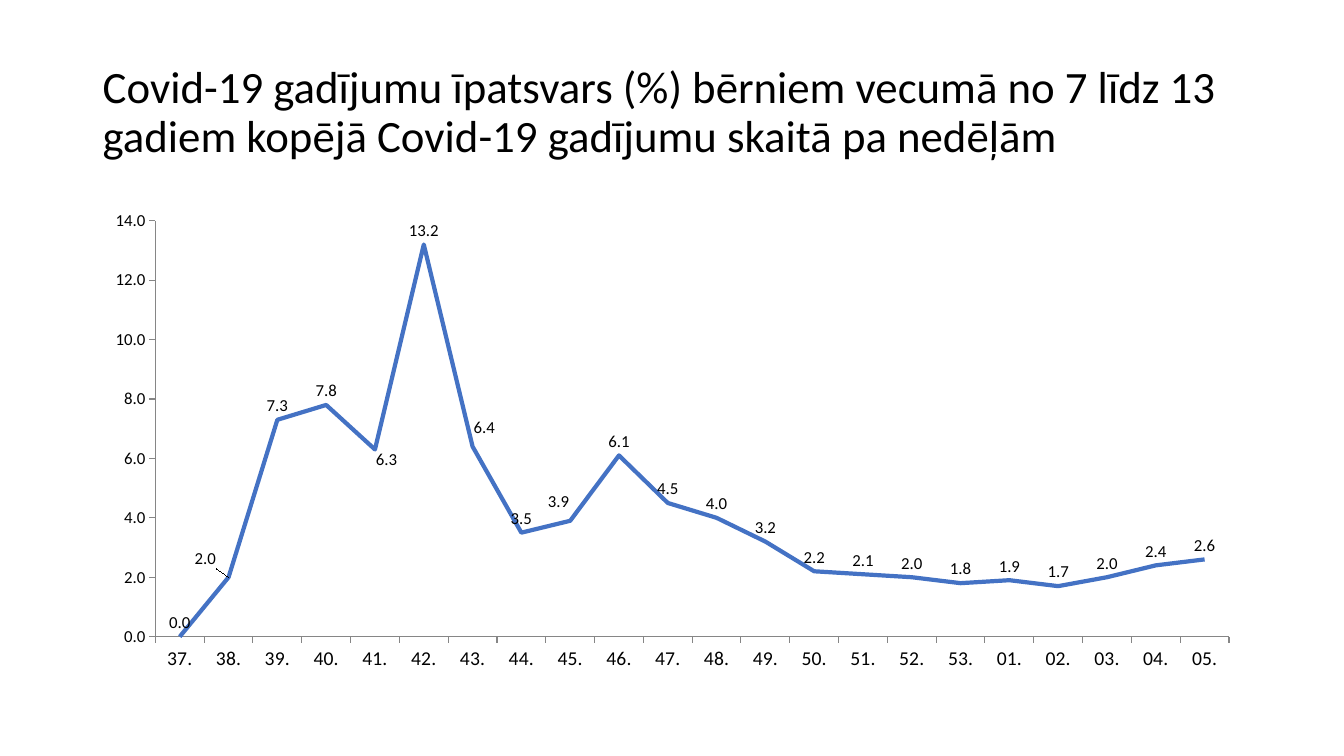
import pptx
import pptx.chart.data
import pptx.dml.color
import pptx.enum.chart
import pptx.enum.text
import pptx.oxml
import pptx.oxml.ns
import pptx.util
from pptx.util import Inches

BLACK = pptx.dml.color.RGBColor(0x00, 0x00, 0x00)
BLUE = pptx.dml.color.RGBColor(0x44, 0x72, 0xC4)
GREY = pptx.dml.color.RGBColor(0x86, 0x86, 0x86)
FONT = "Calibri"
TITLE = (
    "Covid-19 gadījumu īpatsvars (%) bērniem vecumā no 7 līdz 13 gadiem "
    "kopējā Covid-19 gadījumu skaitā pa nedēļām"
)
WEEKS = [f"{week:02}." for week in [*range(37, 54), *range(1, 6)]]
SHARES = [0, 2, 7.3, 7.8, 6.3, 13.2, 6.4, 3.5, 3.9, 6.1, 4.5,
          4, 3.2, 2.2, 2.1, 2, 1.8, 1.9, 1.7, 2, 2.4, 2.6]
LABEL_SHIFTS = {1: (-0.02, -0.01), 4: (0.01, 0.05), 6: (0.01, -0.01), 8: (-0.01, -0.01)}


def style_font(font, size):
    """Set the common typeface and colour at the given size."""
    font.name = FONT
    font.size = pptx.util.Pt(size)
    font.color.rgb = BLACK


def make_layout(**settings):
    """Return a manual chart layout element with the given settings."""
    children = "".join(f'<c:{name} val="{value}"/>' for name, value in settings.items())
    namespace = pptx.oxml.ns.nsdecls("c")
    return pptx.oxml.parse_xml(
        f"<c:layout {namespace}><c:manualLayout>{children}</c:manualLayout></c:layout>"
    )


def add_title(slide):
    """Add the slide title."""
    box = slide.shapes.add_textbox(Inches(0.92), Inches(0.4), Inches(11.5), Inches(1.45))
    frame = box.text_frame
    frame.word_wrap = True
    frame.vertical_anchor = pptx.enum.text.MSO_ANCHOR.MIDDLE
    frame.text = TITLE
    paragraph = frame.paragraphs[0]
    paragraph.line_spacing = 0.9
    style_font(paragraph.runs[0].font, 32)


def style_axis(axis, size):
    """Give an axis its line, outward ticks and label font."""
    axis.has_major_gridlines = False
    axis.major_tick_mark = pptx.enum.chart.XL_TICK_MARK.OUTSIDE
    axis.minor_tick_mark = pptx.enum.chart.XL_TICK_MARK.NONE
    axis.format.line.color.rgb = GREY
    axis.format.line.width = pptx.util.Pt(0.75)
    style_font(axis.tick_labels.font, size)


def style_labels(series):
    """Show values above the line and shift the crowded ones."""
    above = pptx.enum.chart.XL_LABEL_POSITION.ABOVE
    labels = series.data_labels
    labels.show_value = True
    labels.number_format = "0.0"
    labels.number_format_is_linked = False
    labels.position = above
    style_font(labels.font, 12)
    for index in LABEL_SHIFTS:
        label = series.points[index].data_label
        style_font(label.font, 12)
        label.position = above


def place_chart_parts(chart):
    """Fix the plot area and the positions of the shifted labels."""
    plot_area = chart._chartSpace.xpath("c:chart/c:plotArea")[0]
    for layout in plot_area.xpath("c:layout"):
        plot_area.remove(layout)
    plot_area.insert(0, make_layout(
        layoutTarget="inner", xMode="edge", yMode="edge", x=0.054, y=0.04, w=0.926, h=0.867
    ))
    for label in plot_area.xpath(".//c:dLbl"):
        index = label.xpath("c:idx")[0]
        shift_x, shift_y = LABEL_SHIFTS[int(index.get("val"))]
        index.addnext(make_layout(x=shift_x, y=shift_y))


def add_share_chart(slide):
    """Add the line chart of weekly shares."""
    data = pptx.chart.data.CategoryChartData(number_format="0.0")
    data.categories = WEEKS
    data.add_series("Series 1", SHARES)
    chart = slide.shapes.add_chart(
        pptx.enum.chart.XL_CHART_TYPE.LINE,
        Inches(0.92), Inches(2), Inches(11.5), Inches(4.76), data,
    ).chart
    chart.has_legend = False
    chart.has_title = False
    style_font(chart.font, 10)
    style_axis(chart.category_axis, 14)
    style_axis(chart.value_axis, 12)
    chart.value_axis.minimum_scale = 0
    chart.value_axis.maximum_scale = 14
    chart.value_axis.major_unit = 2
    chart.value_axis.tick_labels.number_format = "0.0"
    chart.value_axis.tick_labels.number_format_is_linked = False
    plot = chart.plots[0]
    plot.vary_by_categories = False
    series = plot.series[0]
    series.smooth = False
    series.marker.style = pptx.enum.chart.XL_MARKER_STYLE.NONE
    series.format.line.color.rgb = BLUE
    series.format.line.width = pptx.util.Pt(3)
    style_labels(series)
    place_chart_parts(chart)


def main():
    """Build and save the presentation."""
    presentation = pptx.Presentation()
    presentation.slide_width = Inches(13.33)
    presentation.slide_height = Inches(7.5)
    slide = presentation.slides.add_slide(presentation.slide_layouts[6])
    add_title(slide)
    add_share_chart(slide)
    presentation.save("out.pptx")


if __name__ == "__main__":
    main()
